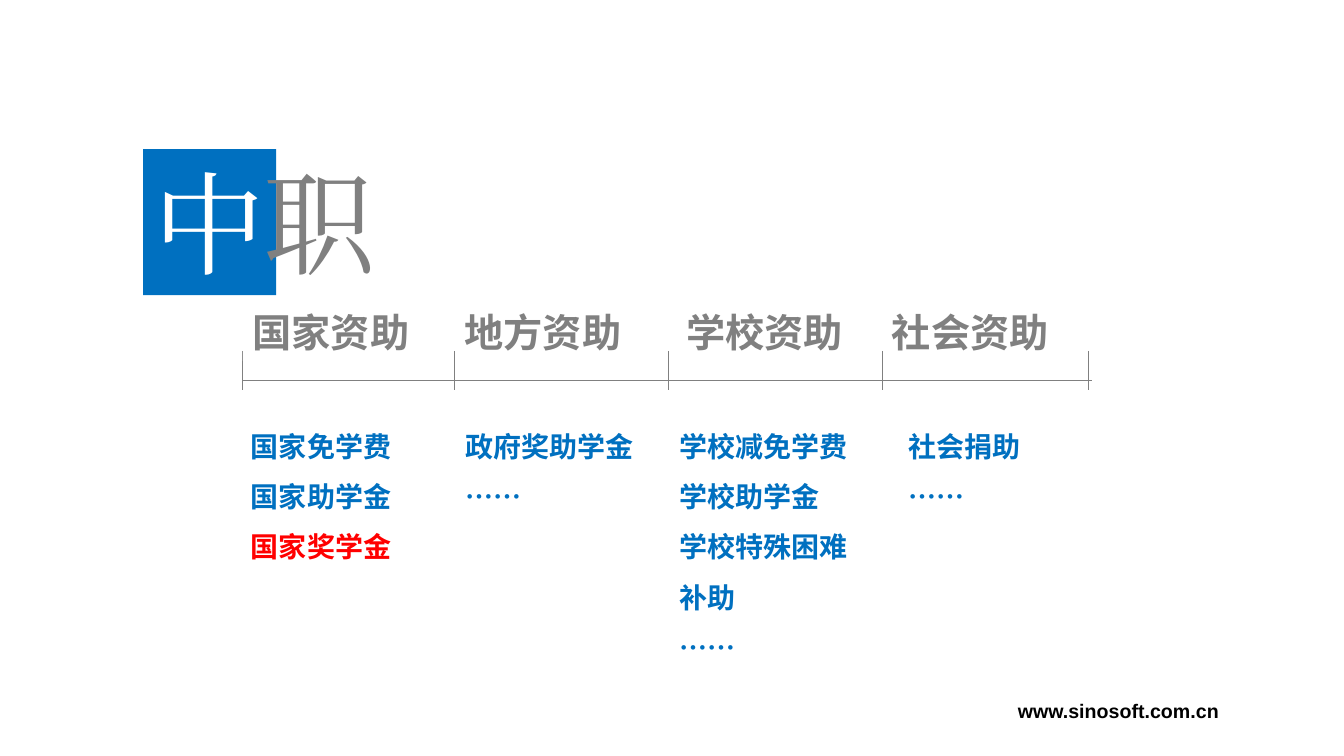
from lxml.etree import SubElement
from pptx import Presentation
from pptx.dml.color import RGBColor
from pptx.enum.shapes import MSO_CONNECTOR
from pptx.enum.text import MSO_ANCHOR, MSO_AUTO_SIZE, PP_ALIGN
from pptx.oxml.ns import qn
from pptx.util import Cm, Pt

BLUE = RGBColor(0x00, 0x70, 0xC0)
GRAY = RGBColor(0x80, 0x80, 0x80)
RED = RGBColor(0xFF, 0x00, 0x00)
WHITE = RGBColor(0xFF, 0xFF, 0xFF)
BLACK = RGBColor(0x00, 0x00, 0x00)
SANS = "Noto Sans CJK SC"
SERIF = "Times New Roman"

AID_COLUMNS = [
    dict(source="国家资助", tick=0, heading=0, items_left=-0.05, items_width=5.46,
         items=["国家免学费", "国家助学金", "国家奖学金"], highlight="国家奖学金"),
    dict(source="地方资助", tick=5.34, heading=5.34, items_left=5.36, items_width=4.78,
         items=["政府奖助学金", "……"], wrap=False),
    dict(source="学校资助", tick=10.72, heading=10.92, items_left=10.75, items_width=5.21,
         items=["学校减免学费", "学校助学金", "学校特殊困难补助", "……"]),
    dict(source="社会资助", tick=16.13, heading=16.11, items_left=16.51, items_width=5.21,
         items=["社会捐助", "……"]),
]


def place(shape, left, top, width, height):
    shape.left, shape.top = Cm(left), Cm(top)
    shape.width, shape.height = Cm(width), Cm(height)
    return shape


def write(shape, lines, *, size, color, font=SANS, bold=True, wrap=False,
          spacing=1.0, highlight=None):
    frame = shape.text_frame
    frame.auto_size = MSO_AUTO_SIZE.NONE
    frame.word_wrap = wrap
    frame.vertical_anchor = MSO_ANCHOR.TOP
    for number, line in enumerate(lines):
        paragraph = frame.add_paragraph() if number else frame.paragraphs[0]
        properties = paragraph._p.get_or_add_pPr()
        properties.set("marL", "0")
        properties.set("indent", "0")
        SubElement(properties, qn("a:buNone"))
        paragraph.alignment = PP_ALIGN.LEFT
        paragraph.line_spacing = spacing
        paragraph.space_before = Pt(0)
        run = paragraph.add_run()
        run.text = line
        run.font.size = Pt(size)
        run.font.bold = bold
        run.font.color.rgb = RED if line == highlight else color
        run.font.name = font
        SubElement(run.font._element, qn("a:ea"), typeface=font)


def add_text(slide, box, text, **style):
    label = place(slide.shapes.add_textbox(0, 0, 0, 0), *box)
    write(label, [text], **style)
    return label


def fill_with(shape, color):
    shape.fill.solid()
    shape.fill.fore_color.rgb = color


def add_rule(slide, x1, y1, x2, y2):
    rule = slide.shapes.add_connector(
        MSO_CONNECTOR.STRAIGHT, Cm(x1), Cm(y1), Cm(x2), Cm(y2))
    rule.line.color.rgb = GRAY
    rule.line.width = Pt(0.75)
    SubElement(rule._element.spPr, qn("a:effectLst"))


def add_title(slide, left, top):
    first = place(slide.shapes.title, left, top, 3.35, 3.68)
    fill_with(first, BLUE)
    style = dict(size=80, font=SERIF, bold=False)
    write(first, ["中"], color=WHITE, **style)
    add_text(slide, (left + 2.79, top + 0.02, 3.35, 3.68), "职", color=GRAY, **style)


def add_timeline(slide, left, top):
    axis = top + 1.93
    add_rule(slide, left, axis, left + 21.41, axis)
    for tick in [column["tick"] for column in AID_COLUMNS] + [21.31]:
        add_rule(slide, left + tick, axis - 0.74, left + tick, axis + 0.25)
    for number, column in enumerate(AID_COLUMNS):
        heading = add_text(slide, (left + column["heading"], top, 4.5, 1.45),
                           column["source"], size=28, color=GRAY)
        if number == 0:
            fill_with(heading, WHITE)


def add_aid_lists(slide, left, top):
    for number, column in enumerate(AID_COLUMNS, start=1):
        items = column["items"]
        aid_list = place(slide.placeholders[number], left + column["items_left"], top,
                         column["items_width"], 6.65 if number == 3 else 0.25 + 1.28 * len(items))
        write(aid_list, items, size=20, color=BLUE, spacing=1.5,
              wrap=column.get("wrap", True), highlight=column.get("highlight"))


def add_footer(slide, left, top):
    add_text(slide, (left, top, 5.61, 0.86), "www.sinosoft.com.cn",
             size=14, color=BLACK, font="Arial")


def main():
    presentation = Presentation()
    presentation.slide_width, presentation.slide_height = Cm(33.87), Cm(19.05)
    slide = presentation.slides.add_slide(
        presentation.slide_layouts.get_by_name("Comparison"))
    add_footer(slide, 25.4, 17.48)
    add_timeline(slide, 6.12, 7.65)
    add_aid_lists(slide, 6.12, 10.26)
    add_title(slide, 3.61, 3.76)
    presentation.save("out.pptx")


if __name__ == "__main__":
    main()
